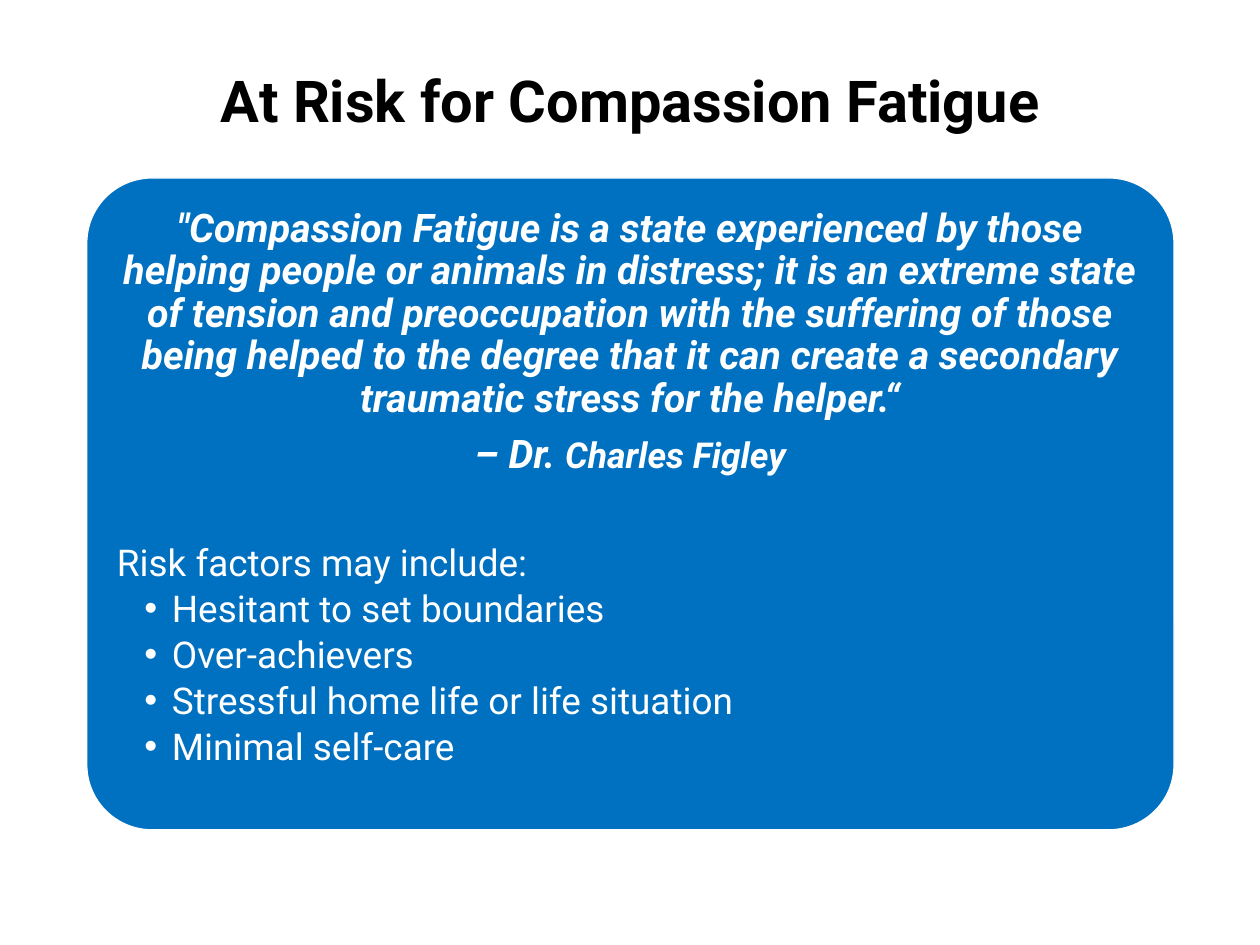
from pptx import Presentation
from pptx.dml.color import RGBColor
from pptx.enum.shapes import MSO_SHAPE as Shape
from pptx.enum.text import MSO_ANCHOR as Anchor, PP_ALIGN as Align
from pptx.util import Inches, Pt
from lxml.etree import SubElement

BLUE = RGBColor(0x00, 0x70, 0xC0)
WHITE = RGBColor(0xFF, 0xFF, 0xFF)
BLACK = RGBColor(0x00, 0x00, 0x00)
FACE = "Roboto"
WIDE, HIGH = 14.22, 10.67
LEFT, SPAN = 0.98, 12.27
PAD, INSET, STEP = 0.21, 0.13, 0.31

QUOTE = (
    '"Compassion Fatigue is a state experienced by those helping people or '
    "animals in distress; it is an extreme state of tension and preoccupation "
    "with the suffering of those being helped to the degree that it can create "
    "a secondary traumatic stress for the helper.“"
)
RISKS = [
    "Hesitant to set boundaries",
    "Over-achievers",
    "Stressful home life or life situation",
    "Minimal self-care",
]


def write(para, text, size=30, color=WHITE, bold=False, slant=False):
    run = para.add_run()
    run.text = text
    font = run.font
    font.name, font.size = FACE, Pt(size)
    font.bold, font.italic = bold, slant
    font.color.rgb = color


def add_para(frame, align=Align.LEFT, after=5, depth=0):
    first = frame.paragraphs[0]
    para = frame.add_paragraph() if first.runs else first
    para.alignment = align
    para.line_spacing = 0.9
    para.space_before, para.space_after = Pt(0), Pt(after)
    props = para._p.get_or_add_pPr()
    if depth:
        para.level = depth
        props.set("marL", str(Inches(depth * STEP)))
        props.set("indent", str(-Inches(STEP)))
    if depth > 1:
        ns = props.nsmap["a"]
        SubElement(props, f"{{{ns}}}buFont", typeface="Arial")
        SubElement(props, f"{{{ns}}}buChar", char="•")
    return para


def add_title(slide, box):
    title = slide.shapes.title
    title.left, title.top, title.width, title.height = map(Inches, box)
    frame = title.text_frame
    frame.vertical_anchor = Anchor.MIDDLE
    write(add_para(frame, Align.CENTER, 0), "At Risk for Compassion Fatigue",
          size=46.9, color=BLACK, bold=True)


def add_panel(slide, box):
    x, y, w, h = box
    panel = slide.shapes.add_shape(Shape.ROUNDED_RECTANGLE, *map(Inches, box))
    panel.adjustments[0] = 0.1
    panel.shadow.inherit = False
    panel.fill.solid()
    panel.fill.fore_color.rgb = BLUE
    panel.line.color.rgb = WHITE
    panel.line.width = Pt(1)

    inner = (x + PAD, y + PAD, w - 2 * PAD, h - 2 * PAD)
    frame = slide.shapes.add_textbox(*map(Inches, inner)).text_frame
    frame.word_wrap = True
    frame.margin_left = frame.margin_right = Inches(INSET)
    frame.margin_top = frame.margin_bottom = Inches(INSET)

    write(add_para(frame, Align.CENTER, 11), QUOTE,
          size=32, bold=True, slant=True)
    credit = add_para(frame, Align.CENTER, 55)
    write(credit, "– Dr. ", size=32, bold=True, slant=True)
    write(credit, "Charles Figley", size=29, bold=True, slant=True)
    write(add_para(frame, depth=1), "Risk factors may include:")
    for risk in RISKS:
        write(add_para(frame, depth=2), risk)


def main():
    deck = Presentation()
    deck.slide_width, deck.slide_height = Inches(WIDE), Inches(HIGH)
    slide = deck.slides.add_slide(deck.slide_layouts[5])
    add_title(slide, (LEFT, 0.57, SPAN, 1.2))
    add_panel(slide, (LEFT, 2.01, SPAN, 7.36))
    deck.save("out.pptx")


if __name__ == "__main__":
    main()
